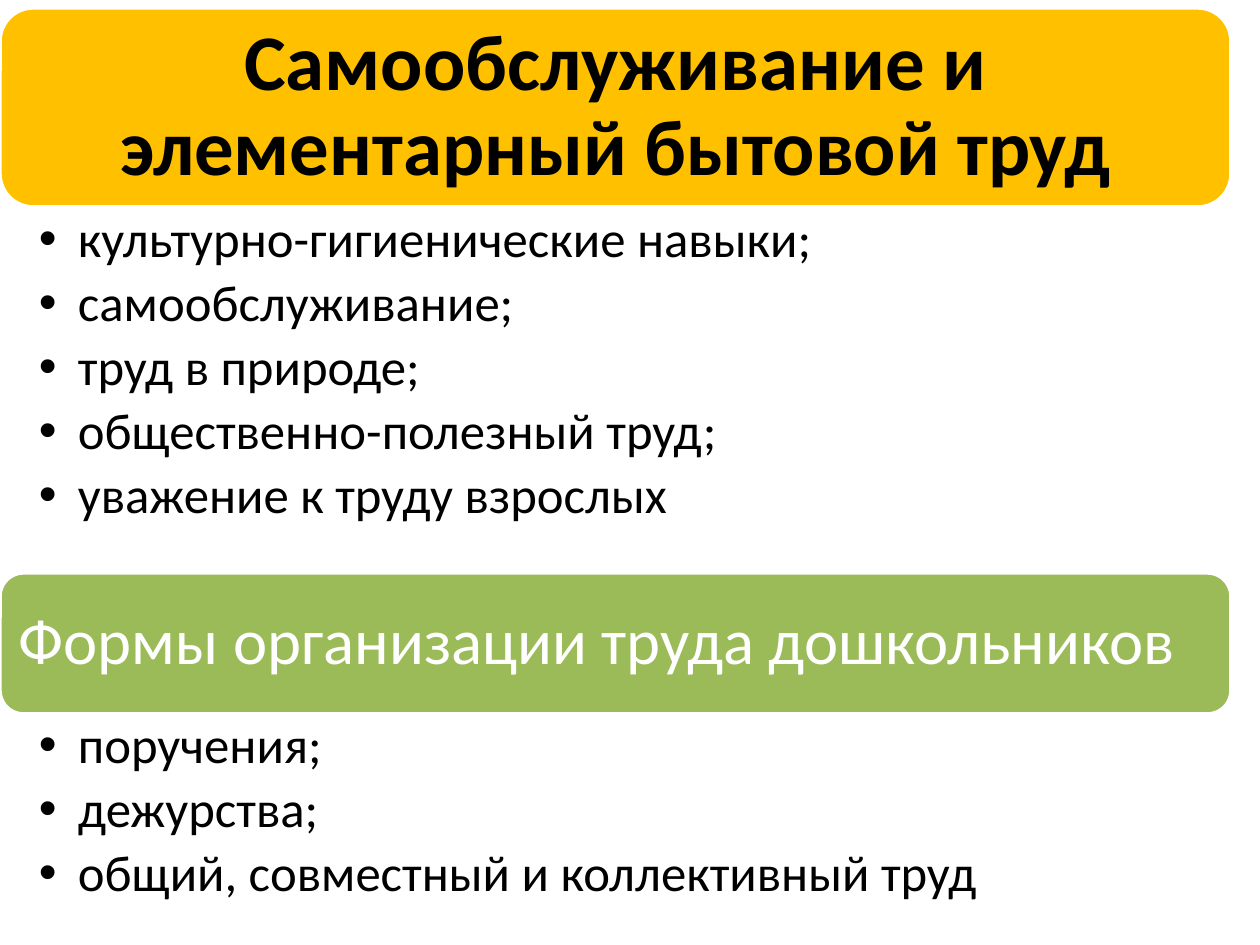
from pptx import Presentation
from pptx.dml.color import RGBColor
from pptx.enum.shapes import MSO_SHAPE
from pptx.enum.text import MSO_ANCHOR, MSO_AUTO_SIZE, PP_ALIGN
from pptx.util import Pt

ROUNDED = MSO_SHAPE.ROUNDED_RECTANGLE
MIDDLE, TOP = MSO_ANCHOR.MIDDLE, MSO_ANCHOR.TOP
LEFT, CENTER = PP_ALIGN.LEFT, PP_ALIGN.CENTER
NO_AUTOFIT = MSO_AUTO_SIZE.NONE
COLORS = {"amber": "FFC000", "green": "9BBB59", "white": "FFFFFF", "black": "000000"}
PX = 914400 / 126
WIDTH = 1231


def add_band(top, height, color):
    band = slide.shapes.add_shape(ROUNDED, 0, round(top * PX), round(WIDTH * PX), round(height * PX))
    band.shadow.inherit = False
    band.fill.solid()
    band.fill.fore_color.rgb = RGBColor.from_string(COLORS[color])
    band.line.color.rgb = RGBColor.from_string(COLORS["white"])
    band.line.width = Pt(2)
    return band


def format_text(frame, size, color, align, anchor, insets, gap, bold=False):
    frame.word_wrap = True
    frame.auto_size = NO_AUTOFIT
    frame.vertical_anchor = anchor
    (frame.margin_left, frame.margin_top,
     frame.margin_right, frame.margin_bottom) = [round(inset * PX) for inset in insets]
    for paragraph in frame.paragraphs:
        paragraph.alignment = align
        paragraph.line_spacing = 0.9
        paragraph.space_before = Pt(0)
        paragraph.space_after = Pt(gap)
        for run in paragraph.runs:
            run.font.name = "Calibri"
            run.font.size = Pt(size)
            run.font.bold = bold
            run.font.color.rgb = RGBColor.from_string(COLORS[color])


prs = Presentation()
prs.slide_width, prs.slide_height = round(1260 * PX), round(945 * PX)
slide = prs.slides.add_slide(prs.slide_layouts[3])

# Title on its amber band, which goes behind the placeholder
title_band = add_band(8, 199, "amber")
slide.shapes._spTree.insert(2, title_band._element)
title = slide.shapes.title
title.left, title.top = title_band.left, title_band.top
title.width, title.height = title_band.width, title_band.height
title.text_frame.text = "Самообслуживание и элементарный бытовой труд"
format_text(title.text_frame, 45, "black", CENTER, MIDDLE, (24, 24, 24, 24), 0, bold=True)

# Second heading
forms_heading = add_band(573, 141, "green")
forms_heading.text_frame.text = "Формы организации труда дошкольников"
format_text(forms_heading.text_frame, 37, "white", LEFT, MIDDLE, (12, 12, 12, 12), 0)

# Bulleted lists: placeholder index, top, height, items
LISTS = [
    (1, 208, 365, ["культурно-гигиенические навыки;", "самообслуживание;", "труд в природе;",
                   "общественно-полезный труд;", "уважение к труду взрослых"]),
    (2, 714, 223, ["поручения;", "дежурства;", "общий, совместный и коллективный труд"]),
]
for index, top, height, items in LISTS:
    labour_list = slide.placeholders[index]
    labour_list.left, labour_list.top = 0, round(top * PX)
    labour_list.width, labour_list.height = round(WIDTH * PX), round(height * PX)
    labour_list.text_frame.text = "\n".join(items)
    format_text(labour_list.text_frame, 29, "black", LEFT, TOP, (39, 6, 37, 6), 5.2)
    for paragraph in labour_list.text_frame.paragraphs:
        properties = paragraph._p.get_or_add_pPr()
        properties.set("marL", str(round(39 * PX)))
        properties.set("indent", str(round(-39 * PX)))

prs.save("out.pptx")
